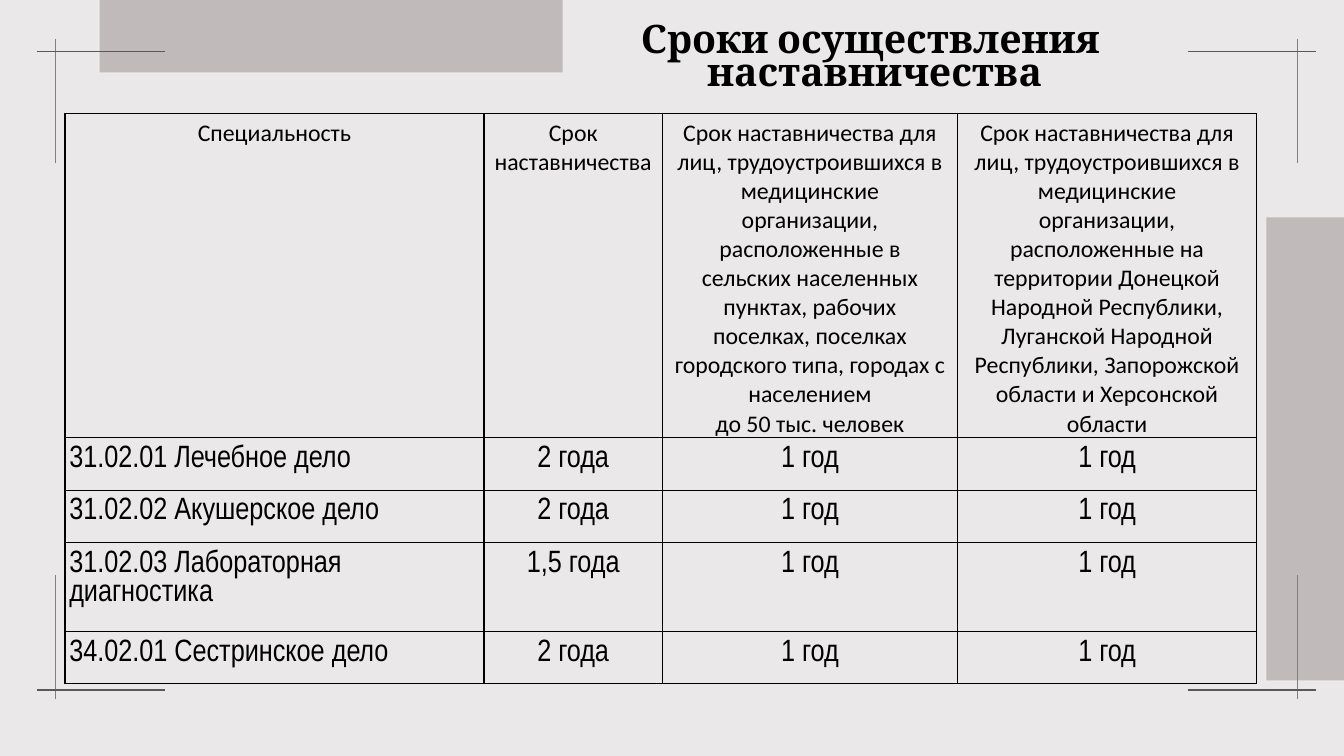
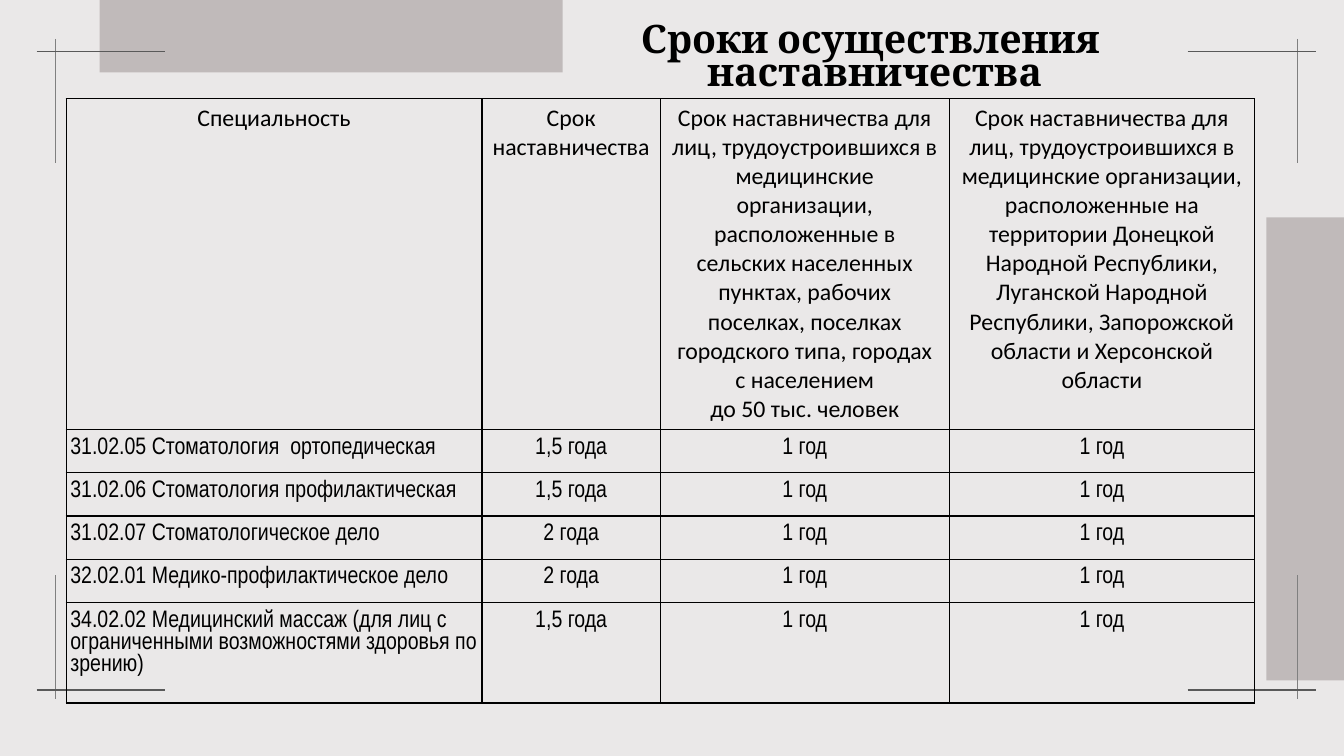
from itertools import product

from lxml.etree import SubElement
from pptx import Presentation
from pptx.dml.color import RGBColor
from pptx.enum.shapes import MSO_CONNECTOR, MSO_SHAPE
from pptx.enum.text import MSO_ANCHOR, MSO_AUTO_SIZE, PP_ALIGN
from pptx.oxml.ns import qn
from pptx.util import Pt

EMU_PER_PX = 9525
COLORS = {
    "background": "EAE8E8",
    "band": "C0BABA",
    "vertical": "808080",
    "horizontal": "595959",
    "text": "000000",
}
TITLE_LINES = ["Сроки осуществления ", "наставничества"]
HEADERS = [
    "Специальность",
    "Срок наставничества",
    "Срок наставничества для лиц, трудоустроившихся в медицинские организации, "
    "расположенные в сельских населенных пунктах, рабочих поселках, поселках "
    "городского типа, городах с населением\nдо 50 тыс. человек",
    "Срок наставничества для лиц, трудоустроившихся в медицинские организации, "
    "расположенные на территории Донецкой Народной Республики, Луганской Народной "
    "Республики, Запорожской области и Херсонской области",
]
REDUCED_TERM = "1 год"
TABLES = [
    {
        "left": 62,
        "top": 108,
        "columns": [399, 170, 281, 285],
        "rows": [309, 50, 50, 84, 50],
        "size": 22,
        "header_bottom": 0,
        "terms": [
            ("31.02.01 Лечебное дело", "2 года"),
            ("31.02.02 Акушерское дело", "2 года"),
            ("31.02.03 Лабораторная диагностика", "1,5 года"),
            ("34.02.01 Сестринское дело", "2 года"),
        ],
    },
    {
        "left": 63,
        "top": 94,
        "columns": [396, 170, 275, 291],
        "rows": [315, 39, 39, 39, 39, 77],
        "size": 17,
        "header_bottom": 5,
        "terms": [
            ("31.02.05 Стоматология  ортопедическая", "1,5 года"),
            ("31.02.06 Стоматология профилактическая", "1,5 года"),
            ("31.02.07 Стоматологическое дело", "2 года"),
            ("32.02.01 Медико-профилактическое дело", "2 года"),
            ("34.02.02 Медицинский массаж (для лиц с ограниченными "
             "возможностями здоровья по зрению)", "1,5 года"),
        ],
    },
]


def px(value):
    return value * EMU_PER_PX


def color(name):
    return RGBColor.from_string(COLORS[name])


def write_text(text_frame, lines, *, font, size, bold=False,
               align=PP_ALIGN.CENTER, spacing=None):
    """Fill a text frame with one formatted paragraph per line."""
    for index, line in enumerate(lines):
        paragraph = text_frame.add_paragraph() if index else text_frame.paragraphs[0]
        paragraph.text = line
        paragraph.alignment = align
        paragraph.line_spacing = spacing
        for run in paragraph.runs:
            run.font.name = font
            run.font.size = Pt(size)
            run.font.bold = bold
            run.font.color.rgb = color("text")
        for line_break in paragraph._p.findall(qn("a:br")):
            SubElement(line_break, qn("a:rPr"), sz=str(size * 100))


def add_band(slide, left, top, rotation=0):
    band = slide.shapes.add_shape(
        MSO_SHAPE.RECTANGLE, px(left), px(top), px(441), px(95))
    band.rotation = rotation
    band.shadow.inherit = False
    band.fill.solid()
    band.fill.fore_color.rgb = color("band")
    band.line.fill.background()
    return band


def add_line(slide, left, top, width, height, color_name):
    line = slide.shapes.add_connector(
        MSO_CONNECTOR.STRAIGHT, px(left), px(top), px(left + width), px(top + height))
    line.line.color.rgb = color(color_name)
    line.line.width = Pt(1)
    SubElement(line._element.spPr, qn("a:effectLst"))
    return line


def set_up_layout(layout):
    """Set the background and title place, and drop the footer placeholders."""
    layout.background.fill.solid()
    layout.background.fill.fore_color.rgb = color("background")
    for placeholder in list(layout.placeholders):
        if placeholder.placeholder_format.idx:
            placeholder.element.getparent().remove(placeholder.element)
        else:
            placeholder.left, placeholder.top = px(419), px(21)
            placeholder.width, placeholder.height = px(828), px(73)


def add_frame_to_layout(slide):
    """Draw bands and corner lines, then move them to the slide's layout."""
    decorations = [add_band(slide, 95, -26), add_band(slide, 1033, 380, rotation=90)]
    for left, top in product((53, 1236), (37, 548)):
        decorations.append(add_line(slide, left, top, 0, 118, "vertical"))
    for left, top in product((35, 1131), (49, 657)):
        decorations.append(add_line(slide, left, top, 122, 0, "horizontal"))
    for decoration in decorations:
        slide.slide_layout.shapes.element.append(decoration.element)


def add_title(slide):
    text_frame = slide.shapes.title.text_frame
    text_frame.word_wrap = True
    text_frame.vertical_anchor = MSO_ANCHOR.TOP
    text_frame.auto_size = MSO_AUTO_SIZE.SHAPE_TO_FIT_TEXT
    write_text(text_frame, TITLE_LINES, font="Cambria", size=28, bold=True, spacing=0.7)


def style_cell(cell):
    """Give a cell thin borders on all sides and no fill."""
    properties = cell._tc.get_or_add_tcPr()
    for side in ("lnL", "lnR", "lnT", "lnB"):
        border = SubElement(properties, qn(f"a:{side}"), w=str(Pt(1)))
        fill = SubElement(border, qn("a:solidFill"))
        SubElement(fill, qn("a:srgbClr"), val=COLORS["text"])
    cell.fill.background()


def add_terms_table(slide, left, top, columns, rows, size, header_bottom, terms):
    table = slide.shapes.add_table(
        len(rows), len(columns), px(left), px(top), px(sum(columns)), px(sum(rows))).table
    table.first_row = table.horz_banding = False
    for column, width in zip(table.columns, columns):
        column.width = px(width)
    for row, height in zip(table.rows, rows):
        row.height = px(height)

    for column_index, header in enumerate(HEADERS):
        cell = table.cell(0, column_index)
        style_cell(cell)
        cell.margin_bottom = px(header_bottom)
        write_text(cell.text_frame, [header], font="Calibri", size=17)

    for row_index, term in enumerate(terms, start=1):
        for column_index, text in enumerate([*term, REDUCED_TERM, REDUCED_TERM]):
            cell = table.cell(row_index, column_index)
            style_cell(cell)
            cell.margin_left = cell.margin_right = px(4)
            cell.margin_top = cell.margin_bottom = px(7)
            write_text(cell.text_frame, [text], font="Arial Narrow", size=size,
                       align=PP_ALIGN.CENTER if column_index else PP_ALIGN.LEFT)


def main():
    presentation = Presentation()
    presentation.slide_width, presentation.slide_height = px(1280), px(720)
    layout = presentation.slide_layouts.get_by_name("Title Only")
    set_up_layout(layout)
    for index, table in enumerate(TABLES):
        slide = presentation.slides.add_slide(layout)
        if index == 0:
            add_frame_to_layout(slide)
        add_title(slide)
        add_terms_table(slide, **table)
    presentation.save("out.pptx")


if __name__ == "__main__":
    main()
